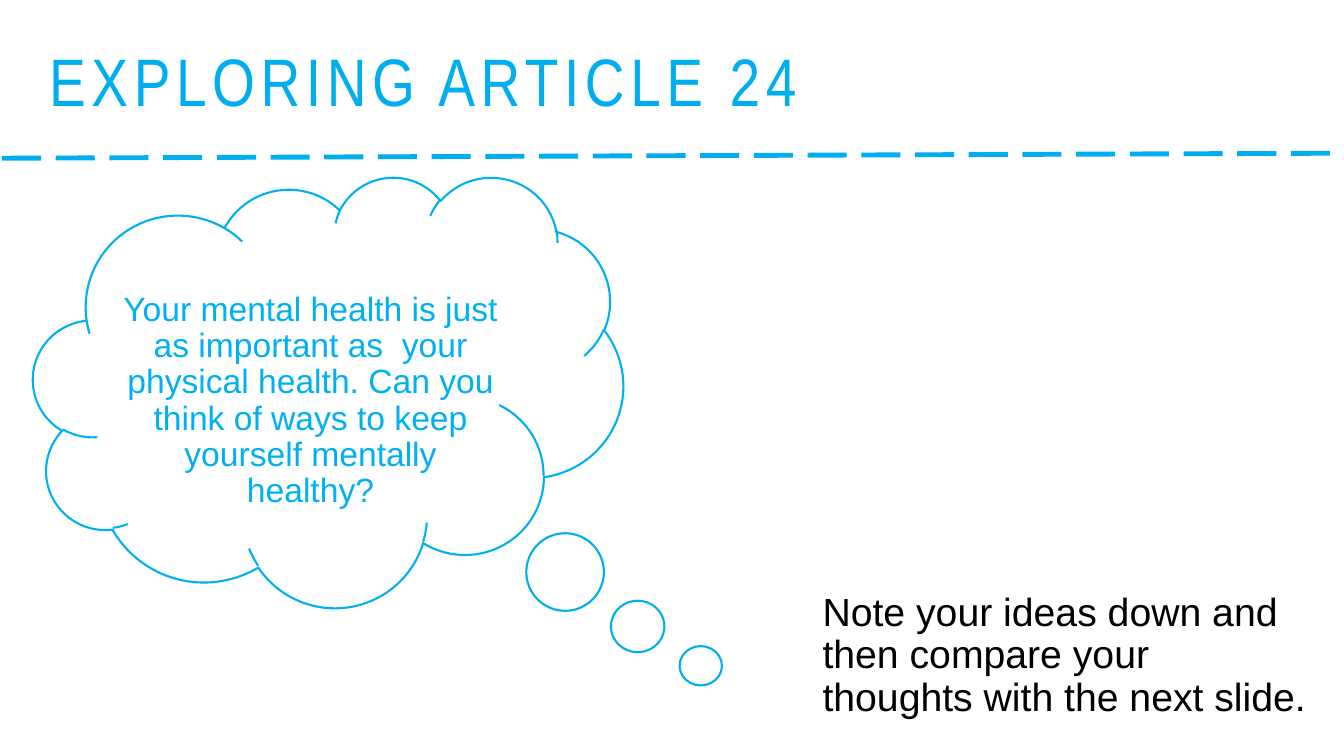
from pptx import Presentation
from pptx.dml.color import RGBColor
from pptx.enum import dml, shapes, text
from pptx.oxml.ns import qn
from pptx.util import Inches, Pt
from lxml import etree

CYAN = RGBColor(0x00, 0xAE, 0xEF)
SKY = RGBColor(0x00, 0xB0, 0xF0)
BLACK = RGBColor(0x00, 0x00, 0x00)

prs = Presentation()
prs.slide_width, prs.slide_height = Inches(13.33), Inches(7.5)
s = prs.slides.add_slide(prs.slide_layouts[6])


def add_text(box, words, frame, para, font, color):
    """Add a one-paragraph text box; frame, para and font hold format values."""
    tf = s.shapes.add_textbox(*map(Inches, box)).text_frame
    p = tf.paragraphs[0]
    r = p.add_run()
    r.text = words
    r.font.color.rgb = color
    for target, values in ((tf, frame), (p, para), (r.font, font)):
        for name, value in values.items():
            setattr(target, name, value)
    return r


# Dashed rule under the title
rule = s.shapes.add_connector(shapes.MSO_CONNECTOR.STRAIGHT,
                              Inches(0.02), Inches(1.57), Inches(13.33), Inches(1.52))
rule.line.color.rgb = CYAN
rule.line.width = Pt(3.5)
rule.line.dash_style = dml.MSO_LINE.LONG_DASH
etree.SubElement(rule._element.spPr, qn("a:effectLst"))

# Thought cloud and its trail of bubbles
CLOUD, OVAL = shapes.MSO_SHAPE.CLOUD, shapes.MSO_SHAPE.OVAL
for kind, box, color in (
    (CLOUD, (0.33, 1.75, 5.85, 4.27), SKY),
    (OVAL, (5.22, 5.29, 0.77, 0.77), CYAN),
    (OVAL, (6.06, 5.96, 0.53, 0.51), CYAN),
    (OVAL, (6.74, 6.41, 0.42, 0.39), CYAN),
):
    sp = s.shapes.add_shape(kind, *map(Inches, box))
    sp.shadow.inherit = False
    sp.fill.background()
    sp.line.color.rgb = color
    sp.line.width = Pt(1.5)

body_frame = {"word_wrap": True, "margin_top": Inches(0.2)}
body_para = {"line_spacing": 0.9, "space_before": Pt(10), "space_after": Pt(10)}

add_text((8.06, 5.68, 5.01, 2.59),
         "Note your ideas down and then compare your thoughts with the next slide.",
         body_frame, body_para, {"name": "Arial", "size": Pt(28)}, BLACK)
add_text((1.11, 2.7, 3.94, 2.68),
         "Your mental health is just as important as  your physical health. "
         "Can you think of ways to keep yourself mentally healthy?",
         body_frame, {**body_para, "alignment": text.PP_ALIGN.CENTER},
         {"name": "Arial", "size": Pt(24)}, SKY)
title = add_text((0.39, 0.29, 12.3, 0.96), "EXPLORING ARTICLE 24",
                 {"word_wrap": True, "vertical_anchor": text.MSO_ANCHOR.BOTTOM},
                 {"line_spacing": 0.9}, {"name": "Arial Narrow", "size": Pt(48)}, CYAN)
title.font._element.set("spc", "400")

prs.save("out.pptx")
